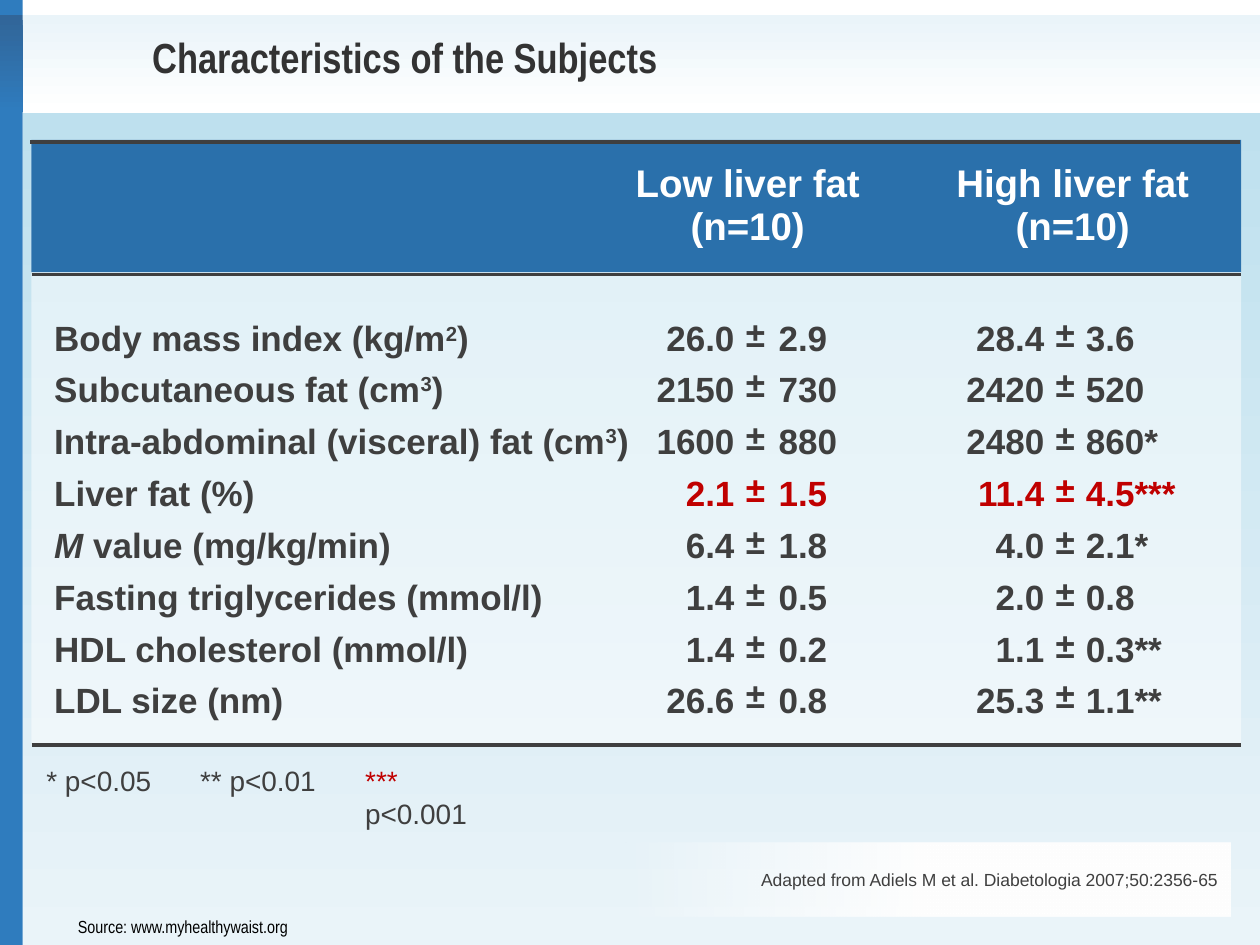
"""Build the slide comparing subjects with low and high liver fat."""
from lxml import etree
from pptx import Presentation
from pptx import util as u
from pptx.dml import color
from pptx.enum import shapes, text
from pptx.oxml import ns

THEME = {
    "ink": "3F3F3F", "red": "C00000", "white": "FFFFFF", "black": "000000",
    "title": "333333", "head": "2A70AB", "bar": "2F7CBE", "dark": "316598",
    "sky": "BEE0EE", "pale": "EAF4F9", "font": "Arial", "slim": "Arial Narrow",
    "big": 24, "top": 22, "body": 20, "note": 16, "small": 10,
}
T = THEME
LEFT, RIGHT = text.PP_ALIGN.LEFT, text.PP_ALIGN.RIGHT
MID, TOP, LOW = text.MSO_ANCHOR.MIDDLE, text.MSO_ANCHOR.TOP, text.MSO_ANCHOR.BOTTOM

HEADS = ["Low liver fat (n=10)", "High liver fat (n=10)"]
ROWS = [
    (("Body mass index (kg/m", "2", ")"), "26.0", "2.9", "28.4", "3.6"),
    (("Subcutaneous fat (cm", "3", ")"), "2150", "730", "2420", "520"),
    (("Intra-abdominal (visceral) fat (cm", "3", ")"), "1600", "880", "2480", "860*"),
    (("Liver fat (%)",), "2.1", "1.5", "11.4", "4.5***"),
    (("M ", "value (mg/kg/min)"), "6.4", "1.8", "4.0", "2.1*"),
    (("Fasting triglycerides (mmol/l)",), "1.4", "0.5", "2.0", "0.8"),
    (("HDL cholesterol (mmol/l)",), "1.4", "0.2", "1.1", "0.3**"),
    (("LDL size (nm)",), "26.6", "0.8", "25.3", "1.1**"),
]
HOT = 3
NOTES = [(0.27, "* ", "p<0.05", "ink"), (1.49, "** ", "p<0.01", "ink"),
         (2.8, "*** ", "p<0.001", "red")]
PANELS = [
    ((0, 0, 0.18, 7.5), [(0, "bar", 100)], 0),
    ((0, 0.12, 10, 0.77), [(0, "pale", 100), (100, "white", 100)], 270),
    ((0, 0.12, 0.18, 0.77), [(0, "dark", 100), (100, "bar", 100)], 270),
    ((0.18, 0.9, 9.82, 6.6), [(0, "sky", 100), (100, "pale", 100)], 270),
    ((4.96, 6.69, 4.81, 0.58),
     [(0, "white", 0), (50, "white", 100), (100, "white", 100)], 0),
    ((0.25, 1.11, 9.6, 4.8), [(0, "white", 50)], 0),
    ((0.25, 1.11, 9.6, 1.05), [(0, "head", 100)], 0),
]
TEXTS = [
    ((0.52, 7.22, 1.89, 0.27), "Source: www.myhealthywaist.org",
     {"size": "small", "ink": "black", "face": "slim"}, LEFT, False),
    ((1.11, 0.2, 8.41, 0.5), "Characteristics of the Subjects",
     {"size": "big", "ink": "title", "face": "slim", "bold": True}, LEFT, True),
    ((2.32, 6.68, 7.44, 0.6),
     "Adapted from Adiels M et al. Diabetologia 2007;50:2356-65",
     {"size": "small"}, RIGHT, True),
]
RULES = [(0.25, 2.18, 1.5), (0.25, 5.91, 2.25), (0.24, 1.13, 2.25)]
EDGES = [0.25, 5.02, 5.83, 6.18, 6.85, 8.29, 8.62, 9.85]
TALL = [1.05, 0.73] + [0.4] * 6 + [0.62]
PLAIN = "{2D5ABB26-0587-4C30-8999-92F81FD0307C}"


def rgb(name):
    """Return a theme colour."""
    return color.RGBColor.from_string(T[name])


def put(obj, vals):
    """Set each attribute named in a dict."""
    for key, val in vals.items():
        setattr(obj, key, val)


def write(para, words, size="body", ink="ink", face="font", bold=False):
    """Add one run and return it."""
    run = para.add_run()
    run.text = words
    put(run.font, {"size": u.Pt(T[size]), "name": T[face], "bold": bold})
    run.font.color.rgb = rgb(ink)
    return run


def tint(node, name, share):
    """Add a colour with its opacity to an XML node."""
    hue = etree.SubElement(node, ns.qn("a:srgbClr"), val=T[name])
    if share < 100:
        etree.SubElement(hue, ns.qn("a:alpha"), val=str(share * 1000))


def panel(slide, box, stops, angle):
    """Draw a solid or graded rectangle."""
    item = slide.shapes.add_shape(shapes.MSO_SHAPE.RECTANGLE, *map(u.Inches, box))
    item.shadow.inherit = False
    item.line.fill.background()
    props = item._element.spPr
    if len(stops) == 1:
        item.fill.solid()
        item.fill.fore_color.rgb = rgb(stops[0][1])
        node = props.find(ns.qn("a:solidFill"))
        node.clear()
        tint(node, *stops[0][1:])
        return
    item.fill.gradient()
    item.fill.gradient_angle = angle
    ramp = props.find(".//" + ns.qn("a:gsLst"))
    ramp.clear()
    for pos, name, share in stops:
        tint(etree.SubElement(ramp, ns.qn("a:gs"), pos=str(pos * 1000)), name, share)


def label(slide, box, wrap, anchor=TOP):
    """Add a text box and return its first paragraph."""
    frame = slide.shapes.add_textbox(*map(u.Inches, box)).text_frame
    put(frame, {"word_wrap": wrap, "vertical_anchor": anchor})
    return frame.paragraphs[0]


def cell_at(grid, row, col, align, anchor, pads):
    """Format a cell and return its paragraph."""
    cell = grid.cell(row, col)
    sides = ("margin_left", "margin_top", "margin_right", "margin_bottom")
    put(cell, dict(zip(sides, map(u.Inches, pads)), vertical_anchor=anchor))
    para = cell.text_frame.paragraphs[0]
    para.alignment = align
    return para


def table(slide):
    """Add the table of means and deviations."""
    box = (EDGES[0], 1.11, EDGES[-1] - EDGES[0], sum(TALL))
    grid = slide.shapes.add_table(len(TALL), len(EDGES) - 1, *map(u.Inches, box)).table
    put(grid, {"first_row": False, "horz_banding": False})
    grid._tbl.tblPr.find(ns.qn("a:tableStyleId")).text = PLAIN
    for col, (start, end) in zip(grid.columns, zip(EDGES, EDGES[1:])):
        col.width = u.Inches(end - start)
    for row, high in zip(grid.rows, TALL):
        row.height = u.Inches(high)
    for cell in grid.iter_cells():
        cell.fill.background()
    for col, words, pad in zip((1, 4), HEADS, (0, 0.33)):
        grid.cell(0, col).merge(grid.cell(0, col + 2))
        para = cell_at(grid, 0, col, text.PP_ALIGN.CENTER, MID, (pad, 0, 0, 0))
        write(para, words, "top", "white", bold=True)
    for num, (name, *vals) in enumerate(ROWS):
        row = num + 1
        anchor = {1: LOW, len(ROWS): TOP}.get(row, MID)
        look = {"ink": "red" if num == HOT else "ink", "bold": True}
        para = cell_at(grid, row, 0, LEFT, anchor, (0.18, 0.04, 0, 0.04))
        runs = [write(para, part, bold=True) for part in name]
        if len(runs) == 3:
            runs[1]._r.get_or_add_rPr().set("baseline", "30000")
        runs[0].font.italic = len(runs) == 2
        for col, mean, dev in ((1, *vals[:2]), (4, *vals[2:])):
            parts = [(mean, RIGHT, (0, 0.04, 0, 0.04)),
                     ("±", LEFT, (0.09, 0, 0, 0.07)),
                     (dev, LEFT, (0, 0.04, 0, 0.04))]
            for step, (words, align, pads) in enumerate(parts):
                write(cell_at(grid, row, col + step, align, anchor, pads), words, **look)


def main():
    """Build and save the slide."""
    deck = Presentation()
    put(deck, {"slide_width": u.Inches(10), "slide_height": u.Inches(7.5)})
    slide = deck.slides.add_slide(deck.slide_layouts[6])
    for args in PANELS:
        panel(slide, *args)
    for box, words, look, align, wrap in TEXTS:
        para = label(slide, box, wrap, MID if wrap else TOP)
        para.alignment = align
        write(para, words, **look)
    table(slide)
    for left, mark, words, ink in NOTES:
        para = label(slide, (left, 6.01, 1.3, 0.37), False)
        write(para, mark, "note", ink)
        write(para, words, "note")
    for left, high, wide in RULES:
        ends = map(u.Inches, (left, high, left + 9.6, high))
        rule = slide.shapes.add_connector(shapes.MSO_CONNECTOR.STRAIGHT, *ends)
        rule.line.color.rgb = rgb("ink")
        rule.line.width = u.Pt(wide)
        etree.SubElement(rule._element.spPr, ns.qn("a:effectLst"))
    deck.save("out.pptx")


if __name__ == "__main__":
    main()
